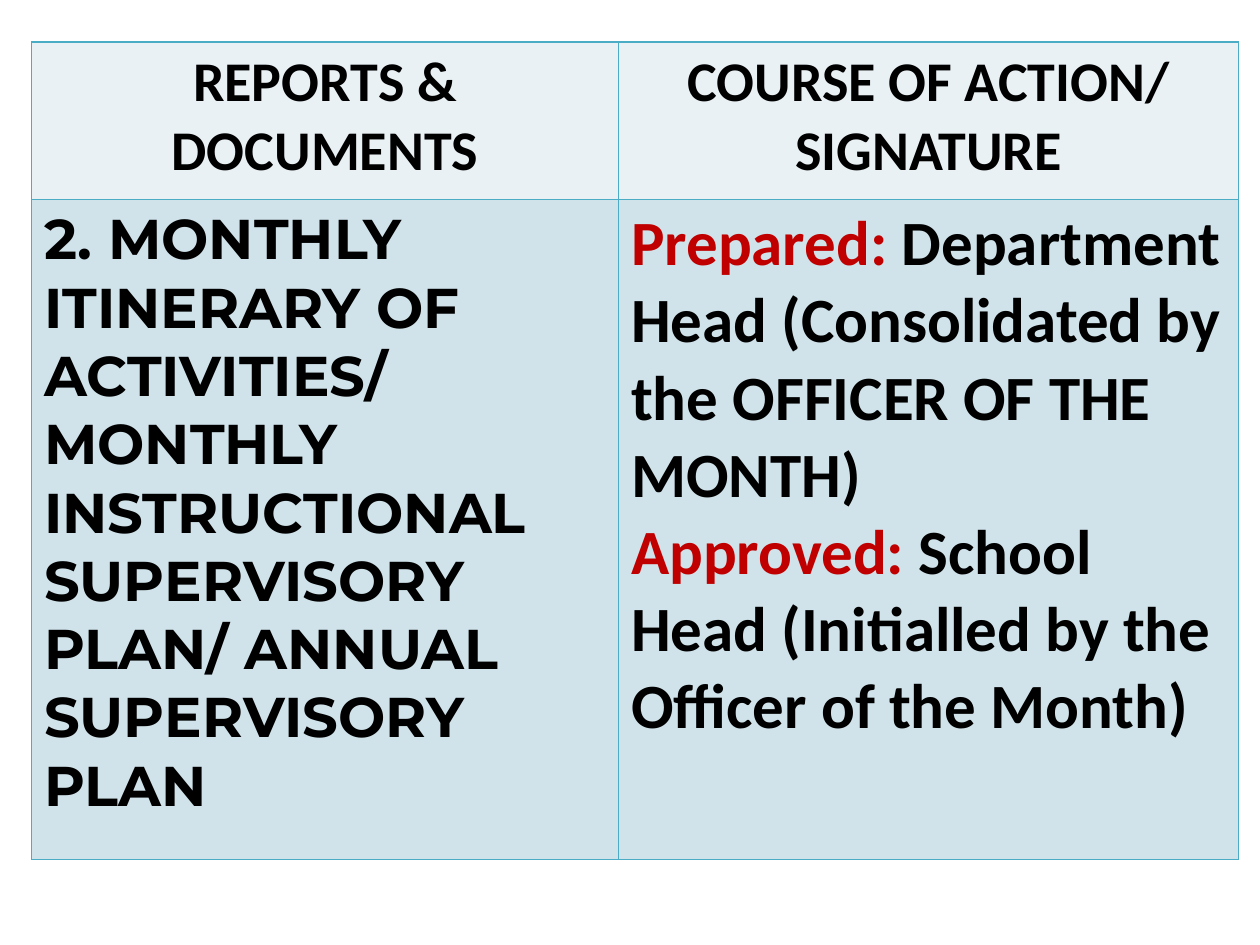
from dataclasses import dataclass

from lxml.etree import SubElement
from pptx import Presentation
from pptx.dml.color import RGBColor
from pptx.enum.text import PP_ALIGN
from pptx.oxml.ns import qn
from pptx.util import Pt


@dataclass(frozen=True)
class Theme:
    text: str = "000000"
    accent: str = "C00000"
    border: str = "4BACC6"
    header_fill: str = "E9F1F5"
    body_fill: str = "D0E3EA"
    body_font: str = "Calibri"
    report_font: str = "Montserrat"
    normal_size: int = 32
    action_size: int = 36
    border_width: int = 1


THEME = Theme()
COLUMN_WIDTHS = (335.5, 354.25)
ROW_HEIGHTS = (90, 377.25)
HEADINGS = ("REPORTS & DOCUMENTS", "COURSE OF ACTION/ SIGNATURE")
REPORT = (
    "2. MONTHLY ITINERARY OF ACTIVITIES/ MONTHLY INSTRUCTIONAL "
    "SUPERVISORY PLAN/ ANNUAL SUPERVISORY PLAN"
)
ACTIONS = (
    ("Prepared: ", "Department Head (Consolidated by the OFFICER OF THE MONTH)"),
    ("Approved: ", "School Head (Initialled by the Officer of the Month)"),
)


def add_table(slide):
    table = slide.shapes.add_table(
        len(ROW_HEIGHTS), len(COLUMN_WIDTHS),
        Pt(18), Pt(24), Pt(sum(COLUMN_WIDTHS)), Pt(sum(ROW_HEIGHTS)),
    ).table
    for column, width in zip(table.columns, COLUMN_WIDTHS):
        column.width = Pt(width)
    for row, height in zip(table.rows, ROW_HEIGHTS):
        row.height = Pt(height)
    return table


def style_cell(cell, fill):
    properties = cell._tc.get_or_add_tcPr()
    for side in ("a:lnL", "a:lnR", "a:lnT", "a:lnB"):
        line = SubElement(properties, qn(side), w=str(Pt(THEME.border_width)))
        solid = SubElement(line, qn("a:solidFill"))
        SubElement(solid, qn("a:srgbClr"), val=THEME.border)
    cell.fill.solid()
    cell.fill.fore_color.rgb = RGBColor.from_string(fill)


def write_paragraph(paragraph, runs, font_name, size, alignment=PP_ALIGN.LEFT):
    paragraph.alignment = alignment
    paragraph.font.name = font_name
    paragraph.font.size = Pt(size)
    paragraph.font.bold = True
    for text, color in runs:
        run = paragraph.add_run()
        run.text = text
        run.font.color.rgb = RGBColor.from_string(color)


def fill_header(table):
    for cell, heading in zip(table.rows[0].cells, HEADINGS):
        style_cell(cell, THEME.header_fill)
        write_paragraph(
            cell.text_frame.paragraphs[0], [(heading, THEME.text)],
            THEME.body_font, THEME.normal_size, PP_ALIGN.CENTER,
        )


def fill_body(table):
    report_cell, action_cell = table.rows[1].cells
    for cell in (report_cell, action_cell):
        style_cell(cell, THEME.body_fill)
    write_paragraph(
        report_cell.text_frame.paragraphs[0], [(REPORT, THEME.text)],
        THEME.report_font, THEME.normal_size,
    )
    frame = action_cell.text_frame
    frame.add_paragraph()
    for paragraph, (label, detail) in zip(frame.paragraphs, ACTIONS):
        write_paragraph(
            paragraph, [(label, THEME.accent), (detail, THEME.text)],
            THEME.body_font, THEME.action_size,
        )


def main():
    presentation = Presentation()
    presentation.slide_width = Pt(720)
    presentation.slide_height = Pt(540)
    slide = presentation.slides.add_slide(presentation.slide_layouts[6])
    table = add_table(slide)
    fill_header(table)
    fill_body(table)
    presentation.save("out.pptx")


if __name__ == "__main__":
    main()
